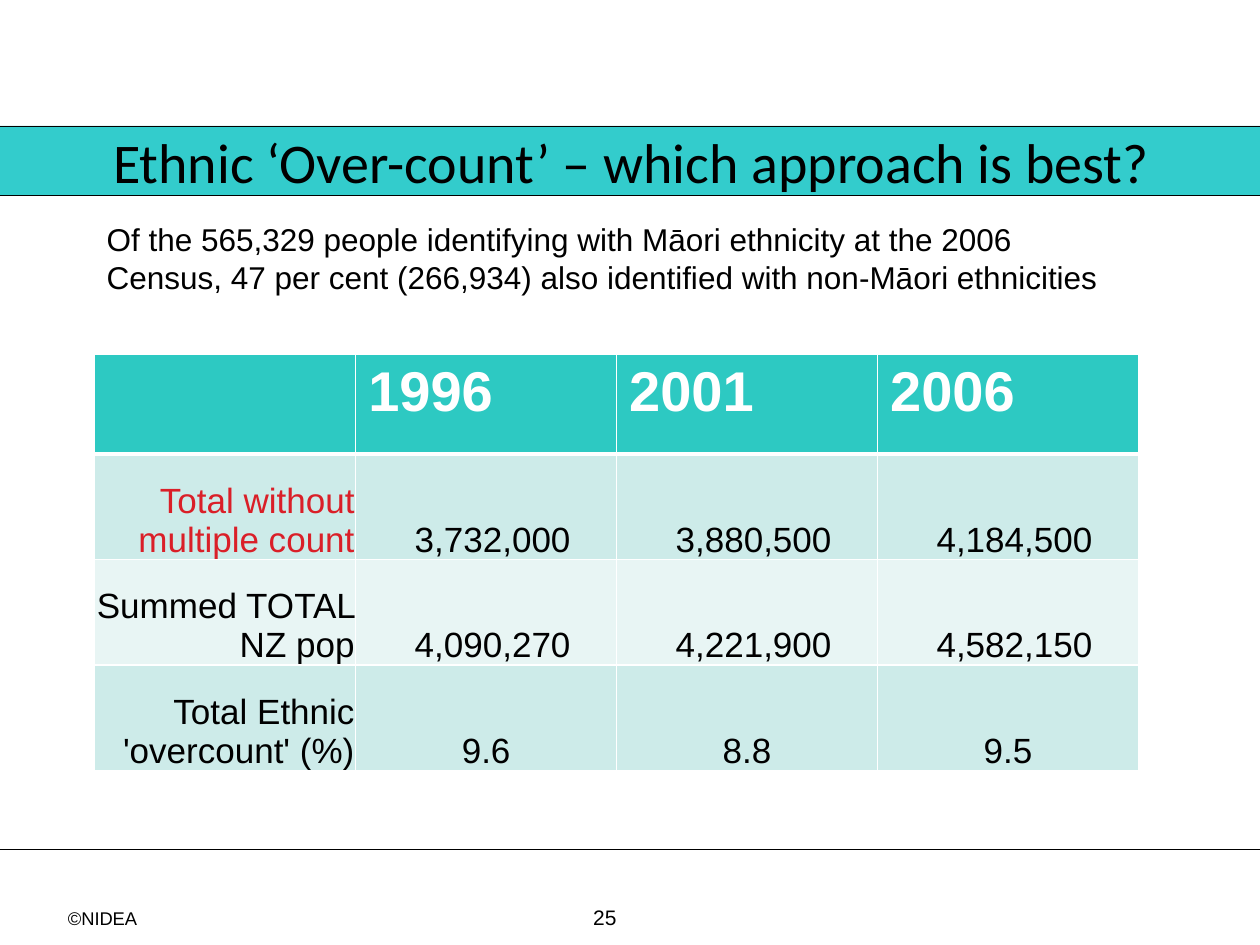
from lxml import etree
from pptx import Presentation
from pptx.dml.color import RGBColor
from pptx.enum.shapes import MSO_CONNECTOR, MSO_SHAPE
from pptx.enum.text import MSO_ANCHOR, PP_ALIGN
from pptx.oxml.ns import qn
from pptx.util import Cm, Pt

BLACK = RGBColor(0x00, 0x00, 0x00)
WHITE = RGBColor(0xFF, 0xFF, 0xFF)
RED = RGBColor(0xDA, 0x1F, 0x28)
BAND = RGBColor(0x33, 0xCC, 0xCC)
HEADER = RGBColor(0x2D, 0xC9, 0xC2)
ROW_FILLS = [RGBColor(0xCD, 0xEB, 0xE9), RGBColor(0xE8, 0xF5, 0xF4)]

# Content: text, left, top, width, height (cm), size, font, anchor
TEXTS = [
    ("Ethnic ‘Over-count’ – which approach is best?",
     2.03, 2.18, 22.86, 2.13, 32, "Calibri", MSO_ANCHOR.MIDDLE),
    ("Of the 565,329 people identifying with Māori ethnicity at the 2006 "
     "Census, 47 per cent (266,934) also identified with non-Māori ethnicities",
     1.9, 4.32, 20.6, 1.8, 18, "Arial", MSO_ANCHOR.TOP),
    ("©NIDEA", 1.12, 18.16, 2.18, 0.74, 10.5, "Arial", MSO_ANCHOR.TOP),
    ("25", 11.71, 18.11, 5.59, 0.76, 12, "Arial", MSO_ANCHOR.TOP),
]
TABLE = [
    ["", "1996", "2001", "2006"],
    ["Total without multiple count", "3,732,000", "3,880,500", "4,184,500"],
    ["Summed TOTAL NZ pop", "4,090,270", "4,221,900", "4,582,150"],
    ["Total Ethnic 'overcount' (%)", "9.6", "8.8", "9.5"],
]
COLUMN_WIDTH = 5.26
ROW_HEIGHTS = [2.01, 2.13, 2.13, 2.13]
CELL_INSET = 0.02
NUMBER_INDENT = 1.19


def add_run(paragraph, text, size, font, color, bold=False):
    run = paragraph.add_run()
    run.text = text
    run.font.size = Pt(size)
    run.font.name = font
    run.font.bold = bold
    run.font.color.rgb = color


def set_borders(cell, widths):
    properties = cell._tc.get_or_add_tcPr()
    for side, width in widths.items():
        line = etree.SubElement(properties, qn(f"a:ln{side}"), w=str(Pt(width)))
        fill = etree.SubElement(line, qn("a:solidFill"))
        etree.SubElement(fill, qn("a:srgbClr"), val=str(WHITE))


def fill_cell(cell, text, row, column):
    set_borders(cell, {"L": 1, "R": 1, "T": 3 if row == 1 else 1,
                       "B": 3 if row == 0 else 1})
    cell.fill.solid()
    cell.fill.fore_color.rgb = ROW_FILLS[(row - 1) % 2] if row else HEADER
    paragraph = cell.text_frame.paragraphs[0]
    if row == 0:
        if text:
            add_run(paragraph, text, 32, "Arial", WHITE, bold=True)
        return
    cell.vertical_anchor = MSO_ANCHOR.BOTTOM
    cell.margin_left = cell.margin_right = cell.margin_top = Cm(CELL_INSET)
    cell.margin_bottom = 0
    if column == 0:
        paragraph.alignment = PP_ALIGN.RIGHT
    elif row == len(TABLE) - 1:
        paragraph.alignment = PP_ALIGN.CENTER
    else:
        cell.margin_left = Cm(NUMBER_INDENT)
    add_run(paragraph, text, 20, "Arial", RED if (row, column) == (1, 0) else BLACK)


presentation = Presentation()
presentation.slide_width = Cm(25.4)
presentation.slide_height = Cm(19.05)
slide = presentation.slides.add_slide(presentation.slide_layouts[6])

# Title band
band = slide.shapes.add_shape(MSO_SHAPE.RECTANGLE, Cm(-0.3), Cm(2.54), Cm(26), Cm(1.4))
band.shadow.inherit = False
band.fill.solid()
band.fill.fore_color.rgb = BAND
band.line.color.rgb = BLACK
band.line.width = Pt(0.5)

# Footer rule
rule = slide.shapes.add_connector(
    MSO_CONNECTOR.STRAIGHT, 0, Cm(17.12), presentation.slide_width, Cm(17.12))
rule.line.color.rgb = BLACK
rule.line.width = Pt(0.75)
etree.SubElement(rule._element.spPr, qn("a:effectLst"))

# Title, introduction and footer
for text, left, top, width, height, size, font, anchor in TEXTS:
    box = slide.shapes.add_textbox(Cm(left), Cm(top), Cm(width), Cm(height))
    box.text_frame.word_wrap = True
    box.text_frame.vertical_anchor = anchor
    add_run(box.text_frame.paragraphs[0], text, size, font, BLACK)

# Population table
table = slide.shapes.add_table(
    len(TABLE), len(TABLE[0]), Cm(1.91), Cm(7.14),
    Cm(COLUMN_WIDTH * len(TABLE[0])), Cm(sum(ROW_HEIGHTS))).table
for column in table.columns:
    column.width = Cm(COLUMN_WIDTH)
for row, (height, values) in enumerate(zip(ROW_HEIGHTS, TABLE)):
    table.rows[row].height = Cm(height)
    for column, text in enumerate(values):
        fill_cell(table.cell(row, column), text, row, column)

presentation.save("out.pptx")
